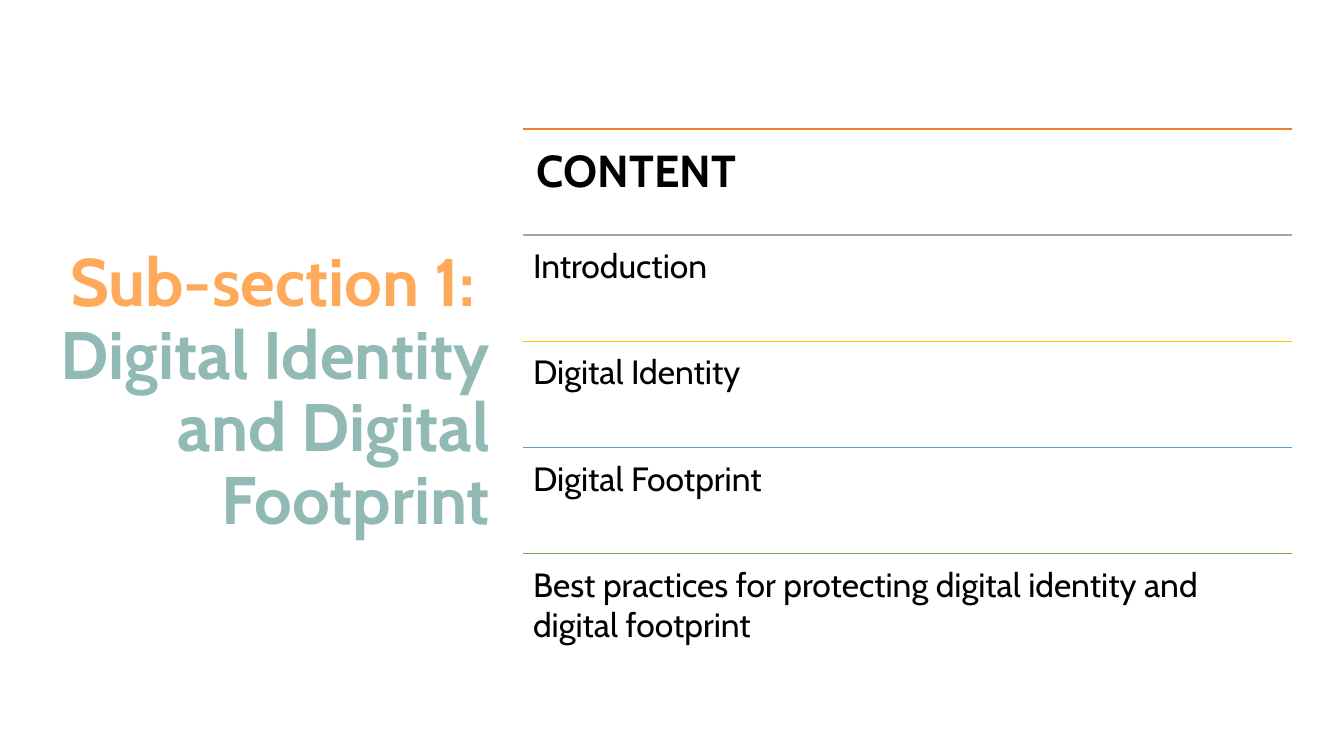
import pptx
import pptx.util
import pptx.dml.color
import pptx.enum.shapes
import pptx.enum.text
import lxml.etree

Pt = pptx.util.Pt


def rgb(value):
    return pptx.dml.color.RGBColor.from_string(value)


def add_run(p, text, size, color, bold=False):
    r = p.add_run()
    r.text = text
    r.font.name = "Cabin"
    r.font.size = Pt(size)
    r.font.bold = bold
    r.font.color.rgb = rgb(color)


prs = pptx.Presentation()
prs.slide_width, prs.slide_height = Pt(960), Pt(540)
s = prs.slides.add_slide(prs.slide_layouts[5])

# Title on the left
title = s.shapes.title
title.left, title.top, title.width, title.height = Pt(27.4), Pt(61.2), Pt(329.8), Pt(440)
tf = title.text_frame
tf.word_wrap = True
tf.auto_size = pptx.enum.text.MSO_AUTO_SIZE.NONE
tf.vertical_anchor = pptx.enum.text.MSO_ANCHOR.MIDDLE
p = tf.paragraphs[0]
p.alignment = pptx.enum.text.PP_ALIGN.RIGHT
p.line_spacing = 0.9
add_run(p, "Sub-section 1: ", 48, "FFAA5A", True)
p.add_line_break()
add_run(p, "Digital Identity and Digital Footprint", 48, "92BAB5", True)

# Content list: a coloured rule above each entry
entries = [
    ("CONTENT", "ED7D31"),
    ("Introduction", "A5A5A5"),
    ("Digital Identity", "FFC000"),
    ("Digital Footprint", "5B9BD5"),
    ("Best practices for protecting digital identity and digital footprint", "70AD47"),
]
left, top, width, row_height = 373.7, 92.2, 549.4, 75.8

for i, (text, color) in enumerate(entries):
    y = top + i * row_height
    heading = i == 0

    # Rule
    rule = s.shapes.add_connector(
        pptx.enum.shapes.MSO_CONNECTOR.STRAIGHT, Pt(left), Pt(y), Pt(left + width), Pt(y))
    rule.line.color.rgb = rgb(color)
    rule.line.width = Pt(1)
    lxml.etree.SubElement(rule._element.spPr, pptx.oxml.ns.qn("a:effectLst"))

    # Entry text
    sp = s.shapes.add_textbox(Pt(left), Pt(y), Pt(width), Pt(row_height))
    tf = sp.text_frame
    tf.word_wrap = True
    inset = Pt(9.6 if heading else 7.2)
    tf.margin_left = tf.margin_top = tf.margin_right = tf.margin_bottom = inset
    add_run(tf.paragraphs[0], text, 32 if heading else 24, "000000", heading)

prs.save("out.pptx")
